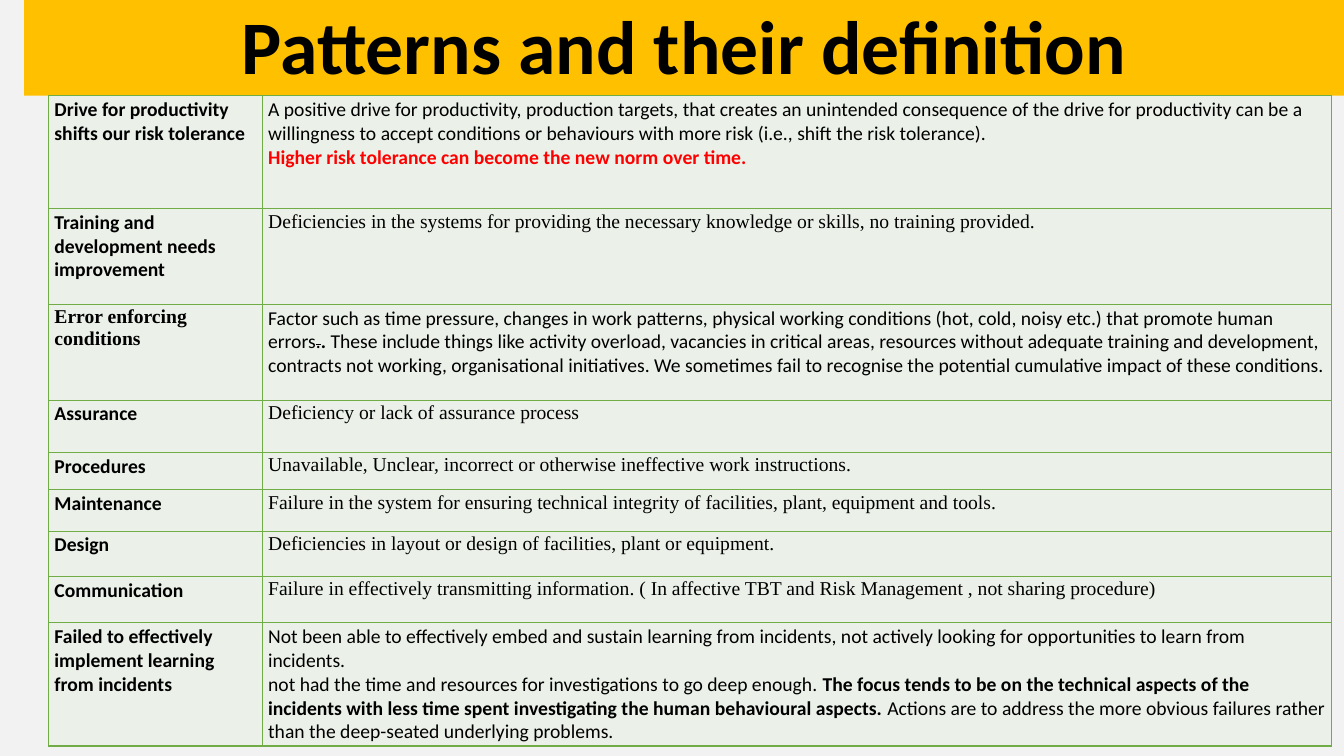
from lxml import etree
from pptx import Presentation
from pptx.dml.color import RGBColor
from pptx.enum.text import MSO_ANCHOR, MSO_AUTO_SIZE, PP_ALIGN
from pptx.oxml.ns import qn
from pptx.util import Inches, Pt

COLORS = {"page": "F2F2F2", "banner": "FFC000", "cell": "EBF1E9",
          "border": "70AD47", "text": "000000", "warning": "FF0000"}
SANS, SERIF = "Calibri", "Times New Roman"
TITLE_BOX = (0.24, 0, 13.09, 0.95)
TABLE_BOX = (0.48, 0.95, 12.73, 6.46)
NAME_WIDTH = 2.12

# Each row: height, name font, name, definition font, paragraphs of (text, style) spans.
PATTERNS = [
    (1.12, SANS, "Drive for productivity shifts our risk tolerance", SANS, [
        [("A positive drive for productivity, production targets, that creates an unintended "
          "consequence of the drive for productivity can be a willingness to accept conditions "
          "or behaviours with more risk (i.e., shift the risk tolerance).", "plain")],
        [("Higher risk tolerance can become the new norm over time.", "warning")]]),
    (0.95, SANS, "Training and development needs improvement", SERIF, [
        [("Deficiencies in the systems for providing the necessary knowledge or skills, "
          "no training provided.", "plain")]]),
    (0.95, SERIF, "Error enforcing conditions", SANS, [
        [("Factor such as time pressure, changes in work patterns, physical working conditions "
          "(hot, cold, noisy etc.) that promote human errors", "plain"),
         (".", "strike"),
         (". ", "bold"),
         ("These include things like activity overload, vacancies in critical areas, resources "
          "without adequate training and development, contracts not working, organisational "
          "initiatives. We sometimes fail to recognise the potential cumulative impact of "
          "these conditions.", "plain")]]),
    (0.52, SANS, "Assurance", SERIF, [
        [("Deficiency or lack of assurance process", "plain")]]),
    (0.37, SANS, "Procedures", SERIF, [
        [("Unavailable, Unclear, incorrect or otherwise ineffective work instructions.", "plain")]]),
    (0.41, SANS, "Maintenance", SERIF, [
        [("Failure in the system for ensuring technical integrity of facilities, plant, "
          "equipment and tools.", "plain")]]),
    (0.45, SANS, "Design", SERIF, [
        [("Deficiencies in layout or design of facilities, plant or equipment.", "plain")]]),
    (0.46, SANS, "Communication", SERIF, [
        [("Failure in effectively transmitting information. ( In affective TBT and Risk "
          "Management , not sharing procedure)", "plain")]]),
    (1.17, SANS, "Failed to effectively implement learning from incidents", SANS, [
        [("Not been able to effectively embed and sustain learning from incidents, not actively "
          "looking for opportunities to learn from incidents.", "plain")],
        [("not had the time and resources for investigations to go deep enough. ", "plain"),
         ("The focus tends to be on the technical aspects of the incidents with less time spent "
          "investigating the human behavioural aspects. ", "bold"),
         ("Actions are to address the more obvious failures rather than the deep-seated "
          "underlying problems.", "plain")]]),
]


def color(name):
    """Return the named colour."""
    return RGBColor.from_string(COLORS[name])


def format_span(span, font, size, style):
    """Apply a font, size and style to one run."""
    span.font.name, span.font.size = font, Pt(size)
    span.font.bold = style in ("bold", "warning")
    span.font.color.rgb = color("warning" if style == "warning" else "text")
    if style == "strike":
        span._r.get_or_add_rPr().set("strike", "sngStrike")


def add_borders(cell):
    """Draw a thin line on all four sides of a cell."""
    properties = cell._tc.get_or_add_tcPr()
    for side in ("a:lnL", "a:lnR", "a:lnT", "a:lnB"):
        line = etree.SubElement(properties, qn(side), w=str(Pt(1)))
        fill = etree.SubElement(line, qn("a:solidFill"))
        etree.SubElement(fill, qn("a:srgbClr"), val=COLORS["border"])


def fill_cell(cell, font, paragraphs):
    """Write styled paragraphs into a bordered cell."""
    add_borders(cell)
    cell.fill.solid()
    cell.fill.fore_color.rgb = color("cell")
    cell.margin_left = cell.margin_right = Inches(0.06)
    cell.margin_top = cell.margin_bottom = Inches(0.02)
    for index, spans in enumerate(paragraphs):
        para = cell.text_frame.add_paragraph() if index else cell.text_frame.paragraphs[0]
        for text, style in spans:
            span = para.add_run()
            span.text = text
            format_span(span, font, 14, style)


def place_title(page, box, text):
    """Turn the title placeholder into a banner filling the box."""
    title = page.shapes.title
    title.left, title.top, title.width, title.height = map(Inches, box)
    title.fill.solid()
    title.fill.fore_color.rgb = color("banner")
    frame = title.text_frame
    frame.text = text
    frame.auto_size = MSO_AUTO_SIZE.NONE
    frame.vertical_anchor = MSO_ANCHOR.BOTTOM
    para = frame.paragraphs[0]
    para.alignment, para.line_spacing = PP_ALIGN.CENTER, 0.9
    format_span(para.runs[0], SANS, 54, "bold")


def add_pattern_table(page, box, patterns):
    """Lay out pattern names and definitions as a table in the box."""
    table = page.shapes.add_table(len(patterns), 2, *map(Inches, box)).table
    table.first_row = table.horz_banding = False
    table.columns[0].width = Inches(NAME_WIDTH)
    table.columns[1].width = Inches(box[2] - NAME_WIDTH)
    for index, (height, name_font, name, font, paragraphs) in enumerate(patterns):
        table.rows[index].height = Inches(height)
        fill_cell(table.cell(index, 0), name_font, [[(name, "bold")]])
        fill_cell(table.cell(index, 1), font, paragraphs)


def main():
    """Build and save the deck."""
    deck = Presentation()
    deck.slide_width, deck.slide_height = Inches(13.33), Inches(7.5)
    page = deck.slides.add_slide(deck.slide_layouts[5])
    page.background.fill.solid()
    page.background.fill.fore_color.rgb = color("page")
    place_title(page, TITLE_BOX, "Patterns and their definition")
    add_pattern_table(page, TABLE_BOX, PATTERNS)
    deck.save("out.pptx")


if __name__ == "__main__":
    main()
